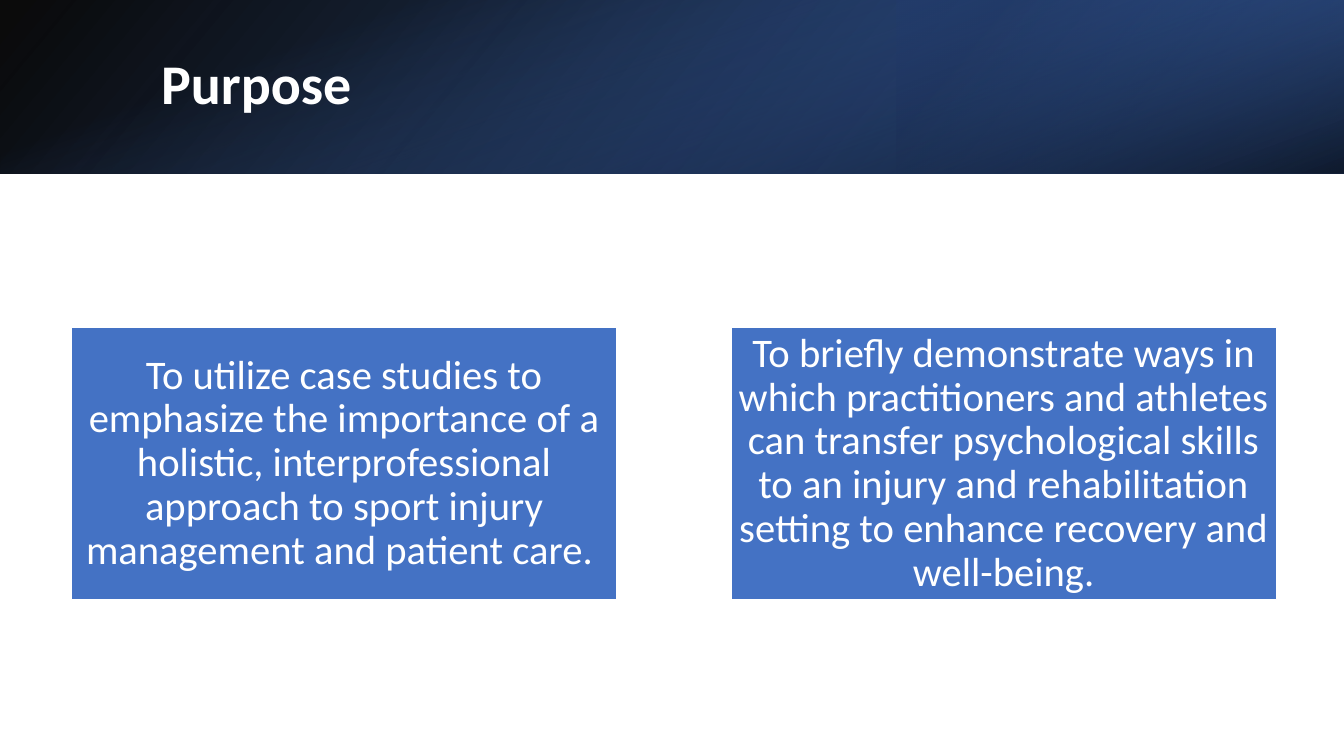
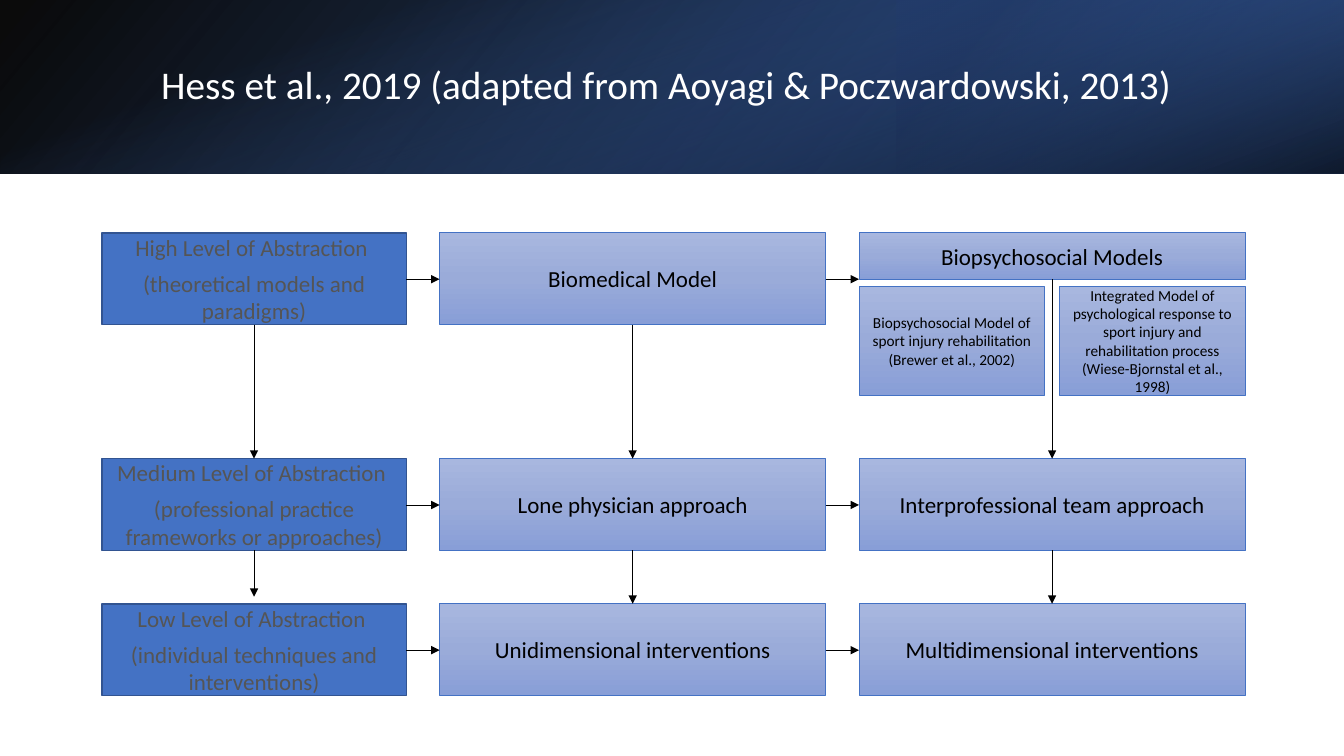
from pptx import Presentation
from pptx.dml.color import RGBColor
from pptx.enum.shapes import MSO_CONNECTOR as CONN, MSO_SHAPE as SHAPE
from pptx.enum.text import MSO_ANCHOR as ANCHOR, PP_ALIGN as ALIGN
from pptx.oxml import parse_xml
from pptx.oxml.ns import nsdecls, qn
from pptx.oxml.xmlchemy import OxmlElement
from pptx.util import Pt

SCALE = 9144  # EMU per px, 100 px to the inch
WIDE, HIGH, BAND = 1333, 750, 172
FONT = "Calibri"
WHITE, BLACK, BLUE = "FFFFFF", "000000", "4472C4"
EDGE, GREY = "325491", "555555"
PALE = [(0, "A8B7DF", 100), (50, "9AABD9", 100), (100, "889ED7", 100)]

CARDS = [
    "To utilize case studies to emphasize the importance of a holistic, "
    "interprofessional approach to sport injury management and patient care. ",
    "To briefly demonstrate ways in which practitioners and athletes can "
    "transfer psychological skills to an injury and rehabilitation setting "
    "to enhance recovery and well-being.",
]
LEVELS = [
    ["High Level of Abstraction ", "(theoretical models and paradigms)"],
    ["Medium Level of Abstraction ",
     "(professional practice frameworks or approaches)"],
    ["Low Level of Abstraction ", "(individual techniques and interventions)"],
]
SINGLE = ["Biomedical Model", "Lone physician approach",
          "Unidimensional interventions"]
TEAM = ["Biopsychosocial Models", "Interprofessional team approach",
        "Multidimensional interventions"]
MODELS = [
    "Biopsychosocial Model of sport injury rehabilitation "
    "(Brewer et al., 2002)",
    "Integrated Model of psychological response to sport injury and "
    "rehabilitation process (Wiese-Bjornstal et al., 1998)",
]


def px(n):
    return round(n * SCALE)


def rgb(code):
    return RGBColor.from_string(code)


def shade(shape, stops, angle):
    """Fill with a linear gradient; stops are (position, colour, opacity)."""
    marks = "".join(
        f'<a:gs pos="{pos * 1000}"><a:srgbClr val="{code}">'
        f'<a:alpha val="{alpha * 1000}"/></a:srgbClr></a:gs>'
        for pos, code, alpha in stops)
    fill = parse_xml(
        f'<a:gradFill {nsdecls("a")} rotWithShape="1"><a:gsLst>{marks}</a:gsLst>'
        f'<a:lin ang="{angle * 60000}" scaled="0"/></a:gradFill>')
    shape.element.spPr.find(qn("a:prstGeom")).addnext(fill)


def rect(slide, box, fill, line=None, width=1, angle=90):
    shape = slide.shapes.add_shape(SHAPE.RECTANGLE, *map(px, box))
    shape.shadow.inherit = False
    if isinstance(fill, str):
        shape.fill.solid()
        shape.fill.fore_color.rgb = rgb(fill)
    else:
        shade(shape, fill, angle)
    if line:
        shape.line.color.rgb = rgb(line)
        shape.line.width = Pt(width)
    else:
        shape.line.fill.background()
    return shape


def write(shape, lines, size, color, bold=False, align=ALIGN.CENTER,
          after=0, lead=1.0, inset=None):
    frame = shape.text_frame
    frame.word_wrap = True
    frame.vertical_anchor = ANCHOR.MIDDLE
    if inset is not None:
        frame.margin_left = frame.margin_right = px(inset)
        frame.margin_top = frame.margin_bottom = px(inset)
    for i, line in enumerate(lines):
        para = frame.add_paragraph() if i else frame.paragraphs[0]
        para.alignment = align
        para.line_spacing = lead
        para.space_after = Pt(after)
        run = para.add_run()
        run.text = line
        font = run.font
        font.name, font.size, font.bold = FONT, Pt(size), bold
        font.color.rgb = rgb(color)


def arrow(slide, x1, y1, x2, y2):
    link = slide.shapes.add_connector(
        CONN.STRAIGHT, px(x1), px(y1), px(x2), px(y2))
    link.line.color.rgb = rgb(BLACK)
    link.line.width = Pt(0.5)
    props = link.element.spPr
    tip = OxmlElement("a:tailEnd")
    tip.set("type", "triangle")
    props.find(qn("a:ln")).append(tip)
    props.append(OxmlElement("a:effectLst"))


def header(slide, title, size, bold=False):
    """Band of three layered gradients with the slide title on it."""
    base = rect(slide, (0, 0, WIDE, BAND),
                [(0, BLACK, 96), (100, "2F5597", 100)], angle=140)
    third = WIDE // 3
    side = rect(slide, (WIDE - third, 0, third, BAND),
                [(19, "203864", 68), (100, BLUE, 79)], angle=320)
    side.rotation = 180
    for layer in (base, side):
        layer.element.spPr.find(qn("a:xfrm")).set("flipH", "1")
    shift = (WIDE - BAND) / 2
    veil = rect(slide, (shift, -shift, BAND, WIDE),
                [(23, BLUE, 0), (99, BLACK, 74)], angle=340)
    veil.rotation = 90
    text = slide.shapes.add_textbox(*map(px, (150, 38, 1098, 96)))
    write(text, [title], size, WHITE, bold, ALIGN.LEFT, lead=0.9)


def cards(slide, box):
    """Equal cards set at the two ends of the box."""
    x, y, w, h = box
    wide = 541
    for i, text in enumerate(CARDS):
        card = rect(slide, (x + i * (w - wide), y, wide, h), BLUE, WHITE)
        write(card, [text], 29, WHITE, lead=0.9, inset=2)


def pale(slide, box, text, size=16.4):
    write(rect(slide, box, PALE, BLUE, 0.5), [text], size, BLACK, after=6)


def models(slide, box):
    x, y, w, h = box
    wide = 184
    for i, text in enumerate(MODELS):
        pale(slide, (x + i * (w - wide), y, wide, h), text, 10.9)


def flow(slide, left, top):
    """Three levels by three columns, joined by arrows."""
    gap, high, head = 33, 91, 46
    wides = [302, 383, 383]
    xs = [left + sum(wides[:i]) + i * gap for i in range(3)]
    ys = [top, top + 224, top + 368]
    for row, y in enumerate(ys):
        level = rect(slide, (xs[0], y, wides[0], high), BLUE, EDGE)
        write(level, LEVELS[row], 16.4, GREY, after=6)
        pale(slide, (xs[1], y, wides[1], high), SINGLE[row])
        tall = high if row else head
        pale(slide, (xs[2], y, wides[2], tall), TEAM[row])
    models(slide, (xs[2], top + 53, wides[2], 108))

    for row, y in enumerate(ys):
        for col, (x, wide) in enumerate(zip(xs, wides)):
            if col < 2:
                arrow(slide, x + wide, y + head, x + wide + gap, y + head)
            if row < 2:
                start = y + (head if (row, col) == (0, 2) else high)
                end = ys[row + 1] - (7 if (row, col) == (1, 0) else 0)
                arrow(slide, x + wide / 2, start, x + wide / 2, end)


def main():
    deck = Presentation()
    deck.slide_width, deck.slide_height = px(WIDE), px(HIGH)
    blank = deck.slide_layouts[6]

    slide = deck.slides.add_slide(blank)
    header(slide, "Purpose", 40, True)
    cards(slide, (71, 325, 1195, 270))

    slide = deck.slides.add_slide(blank)
    header(slide, "Hess et al., 2019 (adapted from Aoyagi & Poczwardowski, 2013)",
           28)
    flow(slide, 101, 231)

    deck.save("out.pptx")


if __name__ == "__main__":
    main()
